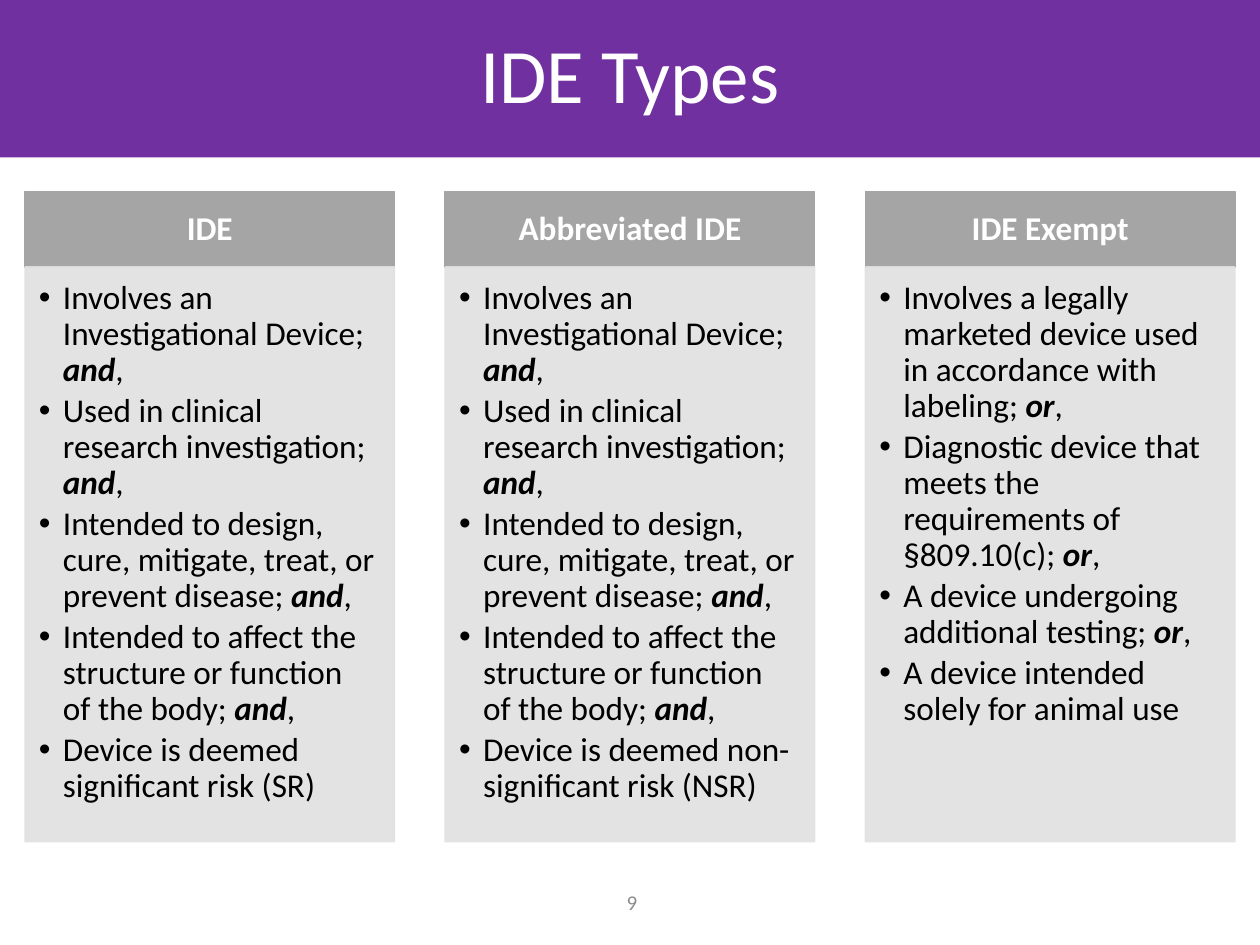
from lxml import etree
from pptx import Presentation
from pptx.dml.color import RGBColor
from pptx.enum.shapes import MSO_SHAPE
from pptx.enum.text import MSO_ANCHOR, MSO_AUTO_SIZE, PP_ALIGN
from pptx.oxml.ns import qn
from pptx.util import Inches, Pt

RECTANGLE = MSO_SHAPE.RECTANGLE
TOP, MIDDLE = MSO_ANCHOR.TOP, MSO_ANCHOR.MIDDLE
LEFT, CENTER = PP_ALIGN.LEFT, PP_ALIGN.CENTER
NO_AUTOFIT = MSO_AUTO_SIZE.NONE

PURPLE = RGBColor(0x70, 0x30, 0xA0)
HEADER_GRAY = RGBColor(0xA5, 0xA5, 0xA5)
BODY_GRAY = RGBColor(0xE1, 0xE1, 0xE1)
NUMBER_GRAY = RGBColor(0x8C, 0x8C, 0x8C)
WHITE = RGBColor(0xFF, 0xFF, 0xFF)
BLACK = RGBColor(0, 0, 0)
FONT = "Calibri"

TITLE = "IDE Types"
PAGE_NUMBER = "9"
SHARED_CRITERIA = [
    "Involves an Investigational Device; ",
    "Used in clinical research investigation; ",
    "Intended to design, cure, mitigate, treat, or prevent disease; ",
    "Intended to affect the structure or function of the body; ",
]
IDE_TYPES = [
    ("IDE", "and", SHARED_CRITERIA + ["Device is deemed significant risk (SR)"]),
    ("Abbreviated IDE", "and",
     SHARED_CRITERIA + ["Device is deemed non-significant risk (NSR)"]),
    ("IDE Exempt", "or", [
        "Involves a legally marketed device used in accordance with labeling; ",
        "Diagnostic device that meets the requirements of §809.10(c); ",
        "A device undergoing additional testing; ",
        "A device intended solely for animal use",
    ]),
]

MARGIN, COLUMN_WIDTH, COLUMN_PITCH = 0.2, 2.93, 3.335
HEADER_TOP, HEADER_HEIGHT, BODY_HEIGHT = 1.52, 0.6, 4.56


def add_run(paragraph, text, size, color, bold=False, italic=False):
    run = paragraph.add_run()
    run.text = text
    run.font.name = FONT
    run.font.size = Pt(size)
    run.font.color.rgb = color
    run.font.bold = bold
    run.font.italic = italic


def set_frame(frame, anchor, insets):
    frame.word_wrap = True
    frame.auto_size = NO_AUTOFIT
    frame.vertical_anchor = anchor
    (frame.margin_left, frame.margin_top,
     frame.margin_right, frame.margin_bottom) = map(Inches, insets)


def add_panel(slide, left, top, height, color, anchor, insets, opacity=None):
    panel = slide.shapes.add_shape(
        RECTANGLE, Inches(left), Inches(top), Inches(COLUMN_WIDTH), Inches(height))
    panel.shadow.inherit = False
    panel.fill.solid()
    panel.fill.fore_color.rgb = color
    panel.line.color.rgb = color
    panel.line.width = Pt(1)
    if opacity:
        for solid_color in panel._element.spPr.iter(qn("a:srgbClr")):
            etree.SubElement(solid_color, qn("a:alpha"), val=str(opacity * 1000))
    set_frame(panel.text_frame, anchor, insets)
    return panel.text_frame


def add_bullet(paragraph):
    properties = paragraph._p.get_or_add_pPr()
    properties.set("marL", str(Inches(0.19)))
    properties.set("indent", str(-Inches(0.19)))
    etree.SubElement(properties, qn("a:buFont"), typeface="Arial")
    etree.SubElement(properties, qn("a:buChar"), char="•")


def add_column(slide, left, heading, joiner, criteria):
    header = add_panel(slide, left, HEADER_TOP, HEADER_HEIGHT, HEADER_GRAY,
                       MIDDLE, (0.15, 0.08, 0.15, 0.08))
    heading_line = header.paragraphs[0]
    heading_line.alignment = CENTER
    heading_line.line_spacing = 0.9
    add_run(heading_line, heading, 19, WHITE, bold=True)

    body = add_panel(slide, left, HEADER_TOP + HEADER_HEIGHT, BODY_HEIGHT, BODY_GRAY,
                     TOP, (0.11, 0.11, 0.15, 0.17), opacity=90)
    for index, criterion in enumerate(criteria):
        item = body.add_paragraph() if index else body.paragraphs[0]
        add_bullet(item)
        item.level = 1
        item.alignment = LEFT
        item.line_spacing = 0.9
        item.space_after = Pt(3)
        add_run(item, criterion, 19, BLACK)
        if index < len(criteria) - 1:
            add_run(item, joiner, 19, BLACK, bold=True, italic=True)
            add_run(item, ",", 19, BLACK)


def main():
    deck = Presentation()
    deck.slide_width, deck.slide_height = Inches(10), Inches(7.5)
    slide = deck.slides.add_slide(deck.slide_layouts[5])

    title = slide.shapes.title
    title.left, title.top = Inches(0), Inches(0)
    title.width, title.height = Inches(10), Inches(1.25)
    title.fill.solid()
    title.fill.fore_color.rgb = PURPLE
    set_frame(title.text_frame, MIDDLE, (0.1, 0.05, 0.1, 0.05))
    title_line = title.text_frame.paragraphs[0]
    title_line.alignment = CENTER
    title_line.line_spacing = 0.9
    add_run(title_line, TITLE, 44, WHITE)

    page = slide.shapes.add_textbox(
        Inches(4.68), Inches(6.96), Inches(0.67), Inches(0.4)).text_frame
    set_frame(page, MIDDLE, (0.1, 0.05, 0.1, 0.05))
    page.paragraphs[0].alignment = CENTER
    add_run(page.paragraphs[0], PAGE_NUMBER, 12, NUMBER_GRAY)

    for column, (heading, joiner, criteria) in enumerate(IDE_TYPES):
        add_column(slide, MARGIN + column * COLUMN_PITCH, heading, joiner, criteria)

    deck.save("out.pptx")


if __name__ == "__main__":
    main()
